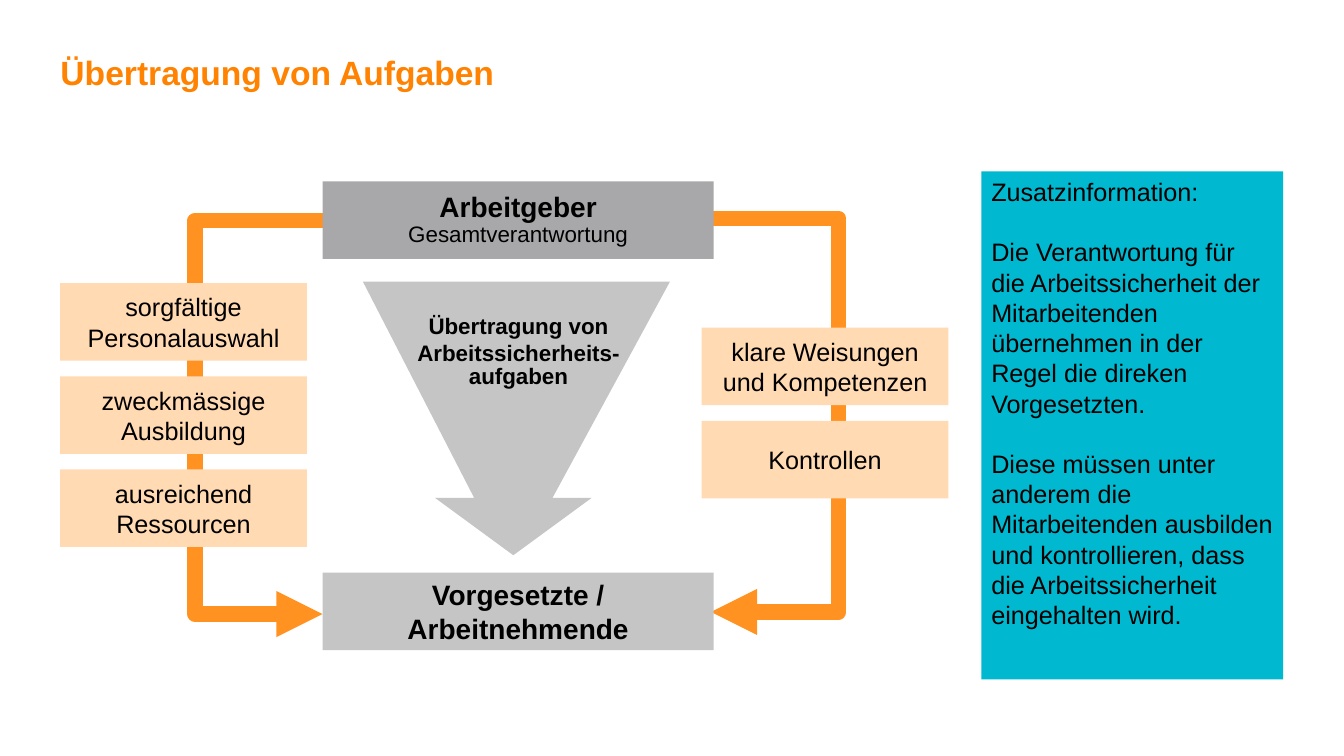
from dataclasses import dataclass

from lxml import etree
from pptx import Presentation
from pptx.dml.color import RGBColor
from pptx.enum import shapes, text
from pptx.oxml import ns
from pptx.util import Pt


@dataclass(frozen=True)
class Theme:
    font: str = "Arial"
    black: str = "000000"
    title: str = "FF8200"
    arrow: str = "FF9220"
    employer: str = "A8A8AA"
    grey: str = "C5C5C6"
    factor: str = "FFDAB3"
    info: str = "00B8CF"
    title_size: int = 24
    role_size: int = 20
    body_size: int = 18
    small_size: int = 16


@dataclass(frozen=True)
class Box:
    left: float
    top: float
    width: float
    height: float

    def lengths(self):
        return Pt(self.left), Pt(self.top), Pt(self.width), Pt(self.height)


THEME = Theme()
CENTER = text.PP_ALIGN.CENTER
LEFT = text.PP_ALIGN.LEFT
TOP = text.MSO_ANCHOR.TOP
MIDDLE = text.MSO_ANCHOR.MIDDLE


def write(frame, lines, size, bold=False, color=THEME.black, align=CENTER,
          anchor=MIDDLE, insets=(0, 0, 0, 0)):
    frame.word_wrap = True
    frame.auto_size = text.MSO_AUTO_SIZE.NONE
    frame.vertical_anchor = anchor
    (frame.margin_left, frame.margin_top,
     frame.margin_right, frame.margin_bottom) = map(Pt, insets)
    frame.text = "\n".join(lines)
    for paragraph in frame.paragraphs:
        paragraph.alignment = align
        for run in paragraph.runs:
            run.font.name = THEME.font
            run.font.size = Pt(size)
            run.font.bold = bold
            run.font.color.rgb = RGBColor.from_string(color)
    return frame.paragraphs


def paint(shape, color):
    shape.shadow.inherit = False
    shape.fill.solid()
    shape.fill.fore_color.rgb = RGBColor.from_string(color)
    shape.line.fill.background()


def add_panel(slide, box, color, lines, size, **style):
    panel = slide.shapes.add_shape(shapes.MSO_SHAPE.RECTANGLE, *box.lengths())
    paint(panel, color)
    return write(panel.text_frame, lines, size, **style)


def add_elbow_arrow(slide, start, end, bend_x):
    arrow = slide.shapes.add_connector(
        shapes.MSO_CONNECTOR.ELBOW, *map(Pt, start + end))
    arrow.line.color.rgb = RGBColor.from_string(THEME.arrow)
    arrow.line.width = Pt(11)
    properties = arrow.element.spPr
    # The bend lies outside the span between both ends
    bend = round((bend_x - start[0]) / (end[0] - start[0]) * 100000)
    guides = properties.find(ns.qn("a:prstGeom")).get_or_add_avLst()
    etree.SubElement(guides, ns.qn("a:gd"), name="adj1", fmla=f"val {bend}")
    etree.SubElement(arrow.line._get_or_add_ln(), ns.qn("a:tailEnd"),
                     type="triangle")
    etree.SubElement(properties, ns.qn("a:effectLst"))


def add_title(slide, box):
    title = slide.shapes.title
    title.left, title.top, title.width, title.height = box.lengths()
    write(title.text_frame, ["Übertragung von Aufgaben"], THEME.title_size,
          bold=True, color=THEME.title, align=LEFT, anchor=TOP)


def add_funnel(slide, box):
    # Wide funnel ending in an arrowhead
    middle = box.left + box.width * 0.49
    right, bottom = box.left + box.width, box.top + box.height
    neck = bottom - 41
    outline = [(box.left, box.top), (right, box.top), (middle + 28, neck),
               (middle + 56, neck), (middle, bottom), (middle - 56, neck),
               (middle - 28, neck)]
    points = [(Pt(x), Pt(y)) for x, y in outline]
    builder = slide.shapes.build_freeform(*points[0])
    builder.add_line_segments(points[1:], close=True)
    paint(builder.convert_to_shape(), THEME.grey)

    caption = Box(box.left + 28, box.top + 21.5, 166.3, 59)
    paragraphs = write(
        slide.shapes.add_textbox(*caption.lengths()).text_frame,
        ["Übertragung von Arbeitssicherheits-", "aufgaben"],
        THEME.small_size, bold=True, insets=(0, 0, 0, 3))
    paragraphs[1].line_spacing = 0.9


def add_factors(slide, box, factors):
    pitch = 66.5
    for row, lines in enumerate(factors):
        factor = Box(box.left, box.top + row * pitch, box.width, box.height)
        add_panel(slide, factor, THEME.factor, lines, THEME.body_size)


def add_diagram(slide, box):
    role_width, factor_width, height = 279.4, 176.4, 55.4
    role_left = box.left + 187.5
    role_right = role_left + role_width
    right = box.left + box.width

    # Arrows from employer to supervisors
    add_elbow_arrow(slide, (role_left + 2, box.top + 28),
                    (role_left, box.top + 309), box.left + 97)
    add_elbow_arrow(slide, (role_right - 3.5, box.top + 26.5),
                    (role_right - 2, box.top + 307.5), right - 78.5)

    add_funnel(slide, Box(role_left + 28.8, box.top + 71.5, 219.4, 195.5))

    # Roles
    employer = add_panel(
        slide, Box(role_left, box.top, role_width, height), THEME.employer,
        ["Arbeitgeber", "Gesamtverantwortung"], THEME.role_size, bold=True)
    for paragraph in employer:
        paragraph.line_spacing = 0.9
    duty = employer[1].runs[0].font
    duty.size, duty.bold = Pt(THEME.small_size), False
    add_panel(
        slide,
        Box(role_left, box.top + box.height - height, role_width, height),
        THEME.grey, ["Vorgesetzte / Arbeitnehmende"], THEME.role_size,
        bold=True)

    # Conditions on either side
    add_factors(slide, Box(box.left, box.top + 72.7, factor_width, height),
                [["sorgfältige", "Personalauswahl"],
                 ["zweckmässige", "Ausbildung"],
                 ["ausreichend", "Ressourcen"]])
    add_factors(slide, Box(right - factor_width, box.top + 104.5,
                           factor_width, height),
                [["klare Weisungen", "und Kompetenzen"], ["Kontrollen"]])


def add_info(slide, box):
    paragraphs = add_panel(
        slide, box, THEME.info,
        ["Zusatzinformation:",
         "Die Verantwortung für die Arbeitssicherheit der Mitarbeitenden "
         "übernehmen in der Regel die direken Vorgesetzten.",
         "Diese müssen unter anderem die Mitarbeitenden ausbilden und "
         "kontrollieren, dass die Arbeitssicherheit eingehalten wird."],
        THEME.body_size, align=LEFT, anchor=TOP, insets=(7.2, 3.6, 7.2, 3.6))
    for paragraph in paragraphs[1:]:
        paragraph.space_before = Pt(21.5)


def main():
    deck = Presentation()
    deck.slide_width, deck.slide_height = Pt(960), Pt(540)
    slide = deck.slides.add_slide(deck.slide_layouts[5])
    add_title(slide, Box(43.2, 37.4, 873.4, 67.7))
    add_diagram(slide, Box(42.9, 129.6, 634.6, 334.8))
    add_info(slide, Box(701, 122.4, 215.6, 362.9))
    deck.save("out.pptx")


if __name__ == "__main__":
    main()
